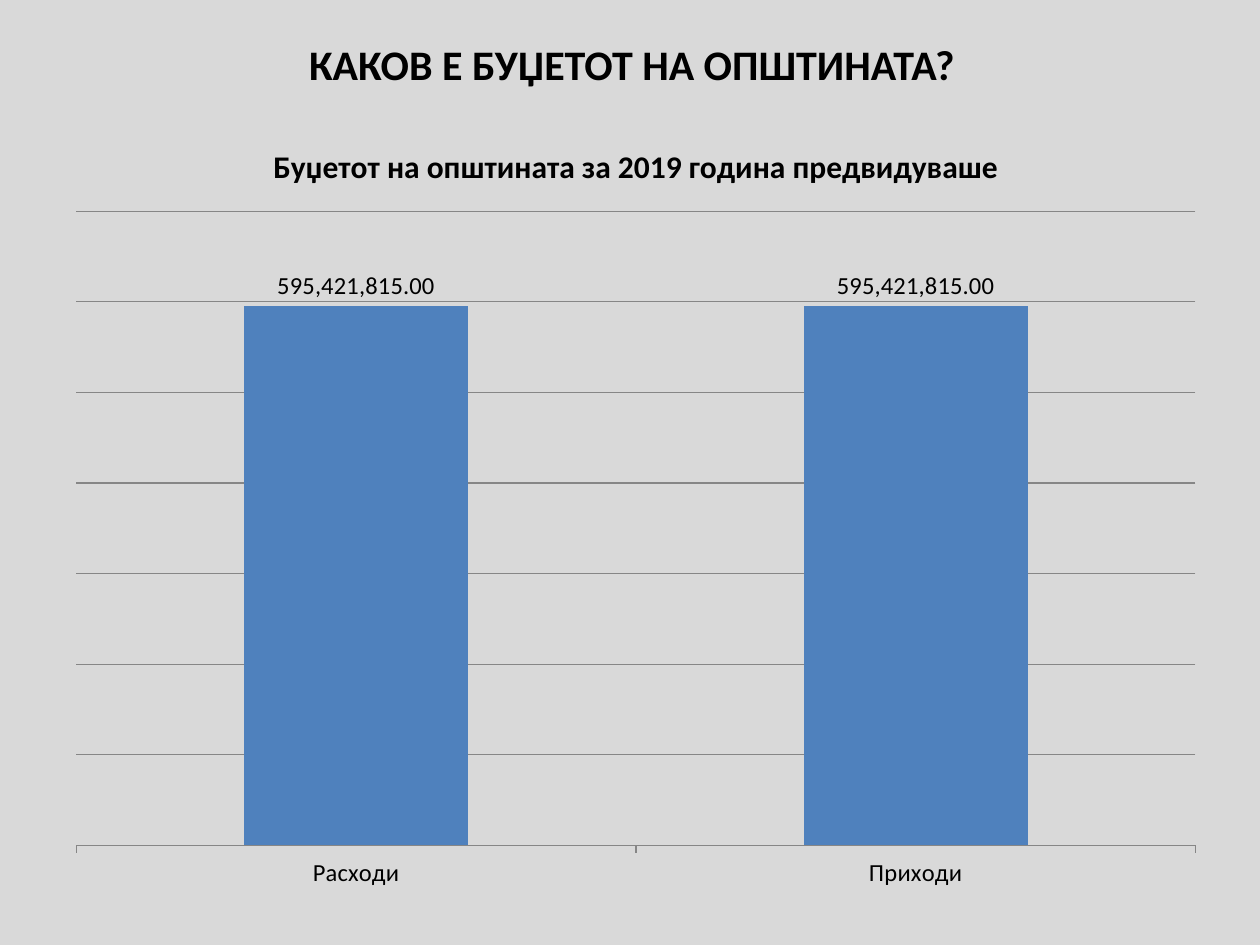
from dataclasses import dataclass

from pptx import Presentation
from pptx.chart.data import CategoryChartData
from pptx.dml.color import RGBColor
from pptx.enum.chart import XL_CHART_TYPE, XL_LABEL_POSITION, XL_TICK_MARK
from pptx.enum.text import MSO_ANCHOR, MSO_AUTO_SIZE, PP_ALIGN
from pptx.util import Cm, Pt


@dataclass(frozen=True)
class Theme:
    font: str = "Calibri"
    background: RGBColor = RGBColor(0xD9, 0xD9, 0xD9)
    text: RGBColor = RGBColor(0, 0, 0)
    bar: RGBColor = RGBColor(0x4F, 0x81, 0xBD)
    grid: RGBColor = RGBColor(0x86, 0x86, 0x86)
    heading_size: Pt = Pt(24)
    chart_title_size: Pt = Pt(18)
    label_size: Pt = Pt(14)
    base_size: Pt = Pt(10)
    grid_width: Pt = Pt(0.75)


class BudgetSlide:
    def __init__(self, presentation, theme):
        self.theme = theme
        self.slide = presentation.slides.add_slide(presentation.slide_layouts[5])
        fill = self.slide.background.fill
        fill.solid()
        fill.fore_color.rgb = theme.background

    def style_font(self, font, size, bold=False):
        font.name = self.theme.font
        font.size = size
        font.bold = bold
        font.color.rgb = self.theme.text

    def style_line(self, line):
        line.color.rgb = self.theme.grid
        line.width = self.theme.grid_width

    def add_heading(self, wording, left, top, width, height):
        heading = self.slide.shapes.title
        heading.left, heading.top, heading.width, heading.height = left, top, width, height
        frame = heading.text_frame
        frame.word_wrap = False
        frame.auto_size = MSO_AUTO_SIZE.SHAPE_TO_FIT_TEXT
        frame.vertical_anchor = MSO_ANCHOR.TOP
        paragraph = frame.paragraphs[0]
        paragraph.alignment = PP_ALIGN.CENTER
        run = paragraph.add_run()
        run.text = wording
        self.style_font(run.font, self.theme.heading_size, bold=True)

    def add_column_chart(self, title, amounts, maximum, step, left, top, width, height):
        budget = CategoryChartData(number_format="#,##0.00")
        budget.categories = list(amounts)
        budget.add_series("Series 1", list(amounts.values()))
        chart = self.slide.shapes.add_chart(
            XL_CHART_TYPE.COLUMN_CLUSTERED, left, top, width, height, budget
        ).chart
        self.style_font(chart.font, self.theme.base_size)
        chart.has_legend = False
        chart.has_title = True
        chart.chart_title.include_in_layout = False
        run = chart.chart_title.text_frame.paragraphs[0].add_run()
        run.text = title
        self.style_font(run.font, self.theme.chart_title_size, bold=True)
        self.style_axes(chart, maximum, step)
        self.style_columns(chart.plots[0])

    def style_axes(self, chart, maximum, step):
        amount_axis = chart.value_axis
        amount_axis.minimum_scale = 0
        amount_axis.maximum_scale = maximum
        amount_axis.major_unit = step
        amount_axis.visible = False
        amount_axis.has_major_gridlines = True
        self.style_line(amount_axis.major_gridlines.format.line)
        category_axis = chart.category_axis
        category_axis.major_tick_mark = XL_TICK_MARK.OUTSIDE
        self.style_font(category_axis.tick_labels.font, self.theme.label_size)
        self.style_line(category_axis.format.line)

    def style_columns(self, plot):
        plot.gap_width = 150
        plot.vary_by_categories = False
        columns = plot.series[0]
        columns.format.fill.solid()
        columns.format.fill.fore_color.rgb = self.theme.bar
        labels = columns.data_labels
        labels.show_value = True
        labels.position = XL_LABEL_POSITION.OUTSIDE_END
        labels.number_format = "#,##0.00"
        labels.number_format_is_linked = False
        self.style_font(labels.font, self.theme.label_size)


def main():
    presentation = Presentation()
    presentation.slide_width = Cm(25.4)
    presentation.slide_height = Cm(19.05)
    budget_slide = BudgetSlide(presentation, Theme())
    budget_slide.add_heading(
        "КАКОВ Е БУЏЕТОТ НА ОПШТИНАТА?", Cm(5.92), Cm(0.64), Cm(13.64), Cm(1.28)
    )
    budget_slide.add_column_chart(
        "Буџетот на општината за 2019 година предвидуваше",
        {"Расходи": 595421815, "Приходи": 595421815},
        700_000_000,
        100_000_000,
        Cm(1.07),
        Cm(2.34),
        Cm(23.5),
        Cm(15.88),
    )
    presentation.save("out.pptx")


if __name__ == "__main__":
    main()
